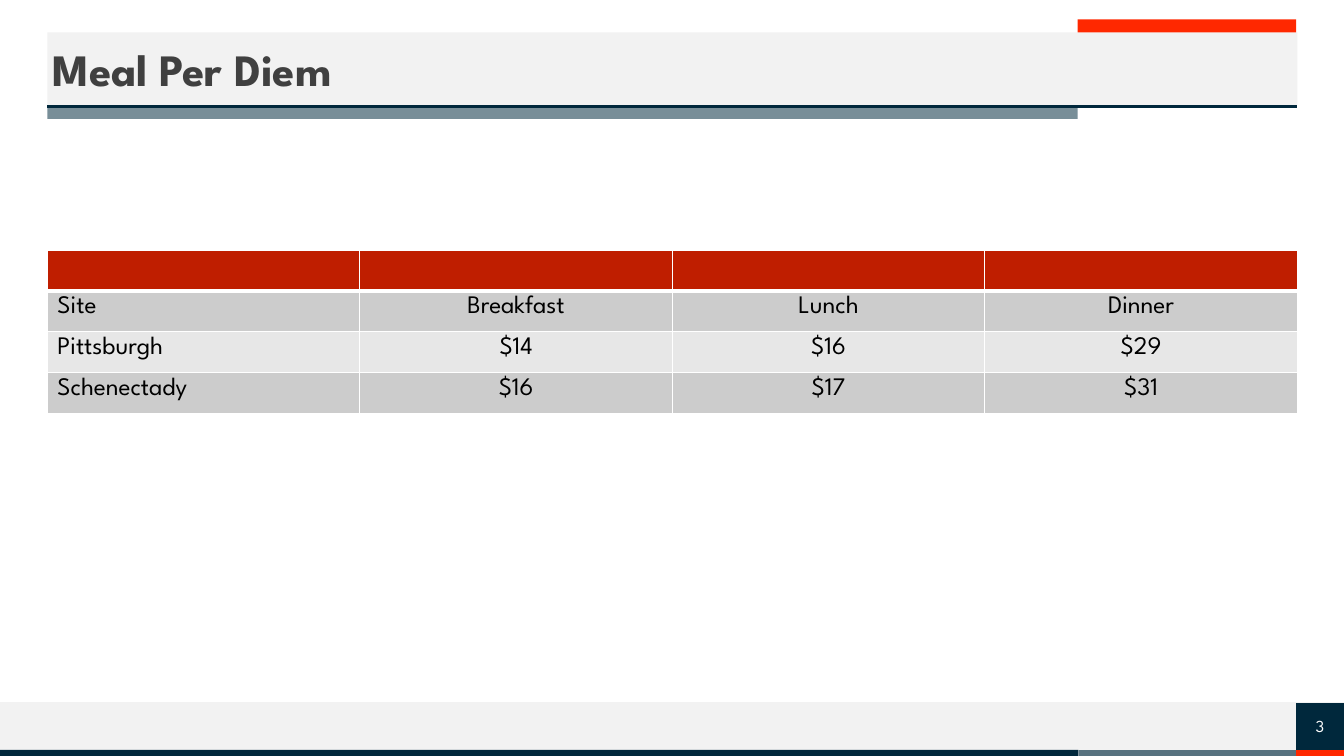
"""Build the Meal Per Diem slide with its rate table."""
from lxml import etree
from pptx import Presentation
from pptx.dml.color import RGBColor
from pptx.enum.shapes import MSO_CONNECTOR, MSO_SHAPE
from pptx.enum.text import MSO_ANCHOR, PP_ALIGN
from pptx.oxml.ns import qn
from pptx.util import Pt

RECT = MSO_SHAPE.RECTANGLE
STRAIGHT = MSO_CONNECTOR.STRAIGHT
MIDDLE = MSO_ANCHOR.MIDDLE
LEFT, CENTER = PP_ALIGN.LEFT, PP_ALIGN.CENTER

NAVY = RGBColor(0x00, 0x28, 0x3C)
SLATE = RGBColor(0x57, 0x72, 0x7F)
RED = RGBColor(0xFF, 0x28, 0x00)
DARK_RED = RGBColor(0xBF, 0x1E, 0x00)
PALE = RGBColor(0xF2, 0xF2, 0xF2)
BAND_DARK = RGBColor(0xCC, 0xCC, 0xCC)
BAND_LIGHT = RGBColor(0xE7, 0xE7, 0xE7)
CHARCOAL = RGBColor(0x40, 0x40, 0x40)
BLACK = RGBColor(0x00, 0x00, 0x00)
WHITE = RGBColor(0xFF, 0xFF, 0xFF)
FONT = "League Spartan"


def add_run(p, text, size, color):
    r = p.add_run()
    r.text = text
    r.font.name = FONT
    r.font.size = Pt(size)
    r.font.color.rgb = color
    return r


def make_line(tag, width, color):
    ln = etree.Element(qn(tag), w=str(Pt(width)))
    fill = etree.SubElement(ln, qn("a:solidFill"))
    etree.SubElement(fill, qn("a:srgbClr"), val=str(color))
    return ln


prs = Presentation()
prs.slide_width, prs.slide_height = Pt(960), Pt(540)
s = prs.slides.add_slide(prs.slide_layouts[5])

bars = [
    (770.4, 535.68, 156.24, 4.32, SLATE),
    (0, 501.84, 925.92, 33.84, PALE),
    (0, 535.68, 770.4, 4.32, NAVY),
    (925.92, 535.68, 34.08, 4.32, RED),
    (925.92, 501.84, 34.08, 33.84, NAVY),
    (769.7, 13.9, 156.24, 9.36, RED),
    (33.84, 76.32, 735.84, 8.64, SLATE),
]
for x, y, w, h, color in bars:
    sp = s.shapes.add_shape(RECT, Pt(x), Pt(y), Pt(w), Pt(h))
    sp.shadow.inherit = False
    sp.fill.solid()
    sp.fill.fore_color.rgb = color
    sp.line.fill.background()
slate_color = sp._element.spPr.find(".//" + qn("a:srgbClr"))
etree.SubElement(slate_color, qn("a:alpha"), val="80000")

rules = [(960, 0, 501.84, PALE, 0.5), (33.84, 926.64, 76.32, NAVY, 2)]
for x1, x2, y, color, width in rules:
    rule = s.shapes.add_connector(STRAIGHT, Pt(x1), Pt(y), Pt(x2), Pt(y))
    rule.line.color.rgb = color
    rule.line.width = Pt(width)
    etree.SubElement(rule._element.spPr, qn("a:effectLst"))

title = s.shapes.title
title.left, title.top = Pt(33.84), Pt(23.04)
title.width, title.height = Pt(892.8), Pt(51.84)
title.fill.solid()
title.fill.fore_color.rgb = PALE
tf = title.text_frame
tf.word_wrap = True
tf.vertical_anchor = MIDDLE
tf.margin_left = tf.margin_right = Pt(3.6)
tf.margin_top = tf.margin_bottom = Pt(14.4)
p = tf.paragraphs[0]
p.alignment = LEFT
r = add_run(p, "Meal Per Diem", 32, CHARCOAL)
r.font.bold = True
r.font._element.insert(0, make_line("a:ln", 0.75, CHARCOAL))

rates = [
    ("", "", "", ""),
    ("Site", "Breakfast", "Lunch", "Dinner"),
    ("Pittsburgh", "$14", "$16", "$29"),
    ("Schenectady", "$16", "$17", "$31"),
]
row_fills = [DARK_RED, BAND_DARK, BAND_LIGHT, BAND_DARK]
table = s.shapes.add_table(4, 4, Pt(33.84), Pt(178.56), Pt(892.8), Pt(116.64)).table
for i, row in enumerate(rates):
    for j, text in enumerate(row):
        cell = table.cell(i, j)
        tcPr = cell._tc.get_or_add_tcPr()
        for side in "LRTB":
            thick = (i, side) in [(0, "B"), (1, "T")]
            tcPr.append(make_line("a:ln" + side, 3 if thick else 1, WHITE))
        cell.fill.solid()
        cell.fill.fore_color.rgb = row_fills[i]
        if text:
            p = cell.text_frame.paragraphs[0]
            p.alignment = CENTER if j else LEFT
            add_run(p, text, 18, BLACK)

number = s.shapes.add_textbox(Pt(925.92), Pt(501.84), Pt(34.08), Pt(33.84))
tf = number.text_frame
tf.word_wrap = True
tf.vertical_anchor = MIDDLE
tf.margin_left = tf.margin_right = tf.margin_top = tf.margin_bottom = 0
p = tf.paragraphs[0]
p.alignment = CENTER
add_run(p, "3", 12, WHITE)

prs.save("out.pptx")
